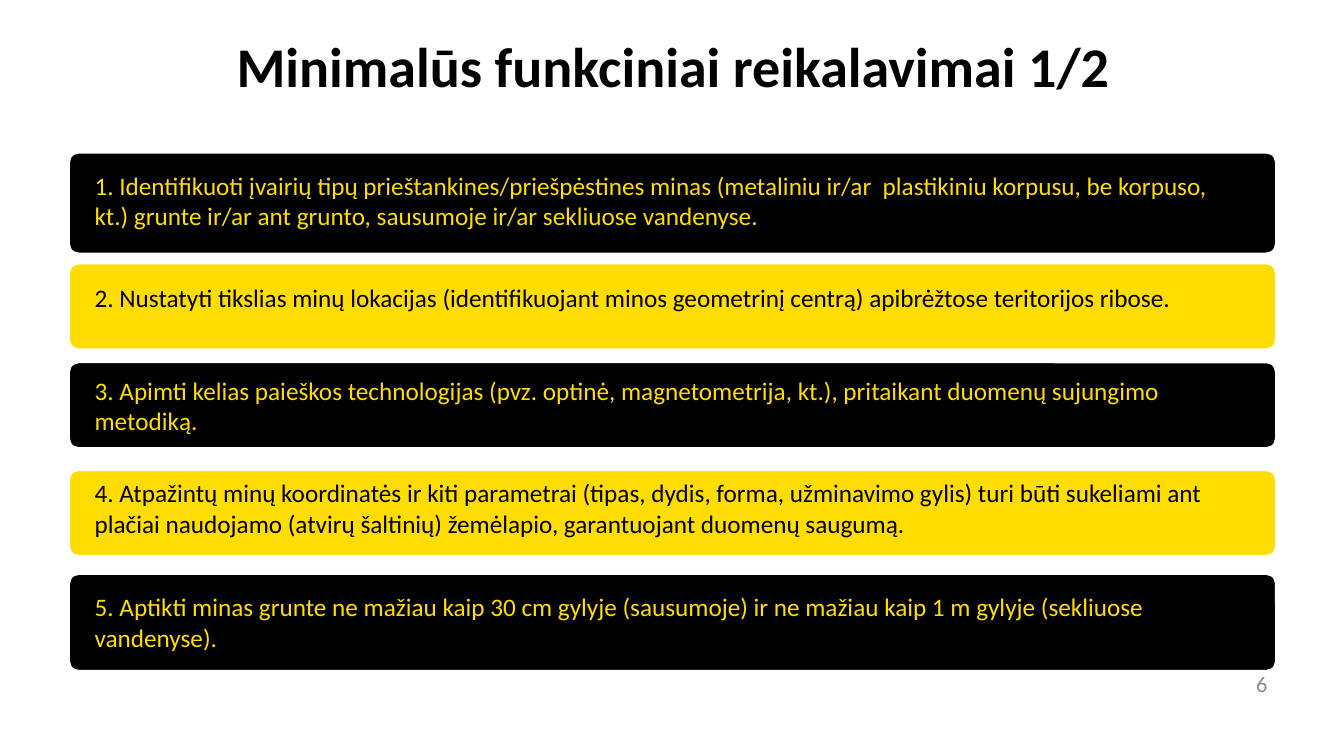
"""Builds the slide of minimal functional requirements."""
import pptx
import pptx.dml.color
import pptx.enum.shapes
import pptx.enum.text
import pptx.util
from pptx.util import Inches

FONT = "Calibri"
COLORS = {"black": "000000", "yellow": "FFDD00", "white": "FFFFFF", "gray": "8C8C8C"}
ALIGN = pptx.enum.text.PP_ALIGN
ANCHOR = pptx.enum.text.MSO_ANCHOR
BAR_LEFT, BAR_WIDTH = 0.68, 11.98
TEXT_LEFT, TEXT_HEIGHT = 0.84, 0.71
CORNER_RADIUS = 0.1

REQUIREMENTS = [
    (1.51, 1.01, 1.64, 11.53,
     "1. Identifikuoti įvairių tipų prieštankines/priešpėstines minas (metaliniu ir/ar  "
     "plastikiniu korpusu, be korpuso, kt.) grunte ir/ar ant grunto, sausumoje ir/ar "
     "sekliuose vandenyse."),
    (2.61, 0.86, 2.75, 11.65,
     "2. Nustatyti tikslias minų lokacijas (identifikuojant minos geometrinį centrą) "
     "apibrėžtose teritorijos ribose."),
    (3.59, 0.86, 3.67, 11.65,
     "3. Apimti kelias paieškos technologijas (pvz. optinė, magnetometrija, kt.), "
     "pritaikant duomenų sujungimo metodiką."),
    (4.66, 0.86, 4.69, 11.65,
     "4. Atpažintų minų koordinatės ir kiti parametrai (tipas, dydis, forma, užminavimo "
     "gylis) turi būti sukeliami ant plačiai naudojamo (atvirų šaltinių) žemėlapio, "
     "garantuojant duomenų saugumą."),
    (5.69, 0.97, 5.82, 11.75,
     "5. Aptikti minas grunte ne mažiau kaip 30 cm gylyje (sausumoje) ir ne mažiau kaip "
     "1 m gylyje (sekliuose vandenyse)."),
]


def rgb(name):
    """Return the named colour."""
    return pptx.dml.color.RGBColor.from_string(COLORS[name])


def add_text(slide, box, text, size, color, align=ALIGN.LEFT, anchor=ANCHOR.TOP, bold=False):
    """Add a wrapped text box of one paragraph."""
    text_frame = slide.shapes.add_textbox(*map(Inches, box)).text_frame
    text_frame.word_wrap = True
    text_frame.vertical_anchor = anchor
    text_frame.text = text
    paragraph = text_frame.paragraphs[0]
    paragraph.alignment = align
    font = paragraph.runs[0].font
    font.name = FONT
    font.size = pptx.util.Pt(size)
    font.bold = bold
    font.color.rgb = rgb(color)


def add_bar(slide, top, height, color):
    """Add a rounded bar with a white outline."""
    shape = slide.shapes.add_shape(
        pptx.enum.shapes.MSO_SHAPE.ROUNDED_RECTANGLE,
        *map(Inches, (BAR_LEFT, top, BAR_WIDTH, height)))
    shape.adjustments[0] = CORNER_RADIUS / height
    shape.shadow.inherit = False
    shape.fill.solid()
    shape.fill.fore_color.rgb = rgb(color)
    shape.line.color.rgb = rgb("white")
    shape.line.width = pptx.util.Pt(2)


def main():
    """Build and save the presentation."""
    presentation = pptx.Presentation()
    presentation.slide_width = Inches(13.33)
    presentation.slide_height = Inches(7.5)
    slide = presentation.slides.add_slide(presentation.slide_layouts[6])
    add_text(slide, (1.01, 0.27, 11.33, 0.75), "Minimalūs funkciniai reikalavimai 1/2",
             40, "black", ALIGN.CENTER, ANCHOR.MIDDLE, bold=True)
    add_text(slide, (9.56, 6.58, 3.11, 0.4), "6", 16, "gray", ALIGN.RIGHT, ANCHOR.MIDDLE)
    for index, (top, height, text_top, text_width, text) in enumerate(REQUIREMENTS):
        bar_color, text_color = ("yellow", "black") if index % 2 else ("black", "yellow")
        add_bar(slide, top, height, bar_color)
        add_text(slide, (TEXT_LEFT, text_top, text_width, TEXT_HEIGHT), text, 18, text_color)
    presentation.save("out.pptx")


if __name__ == "__main__":
    main()
